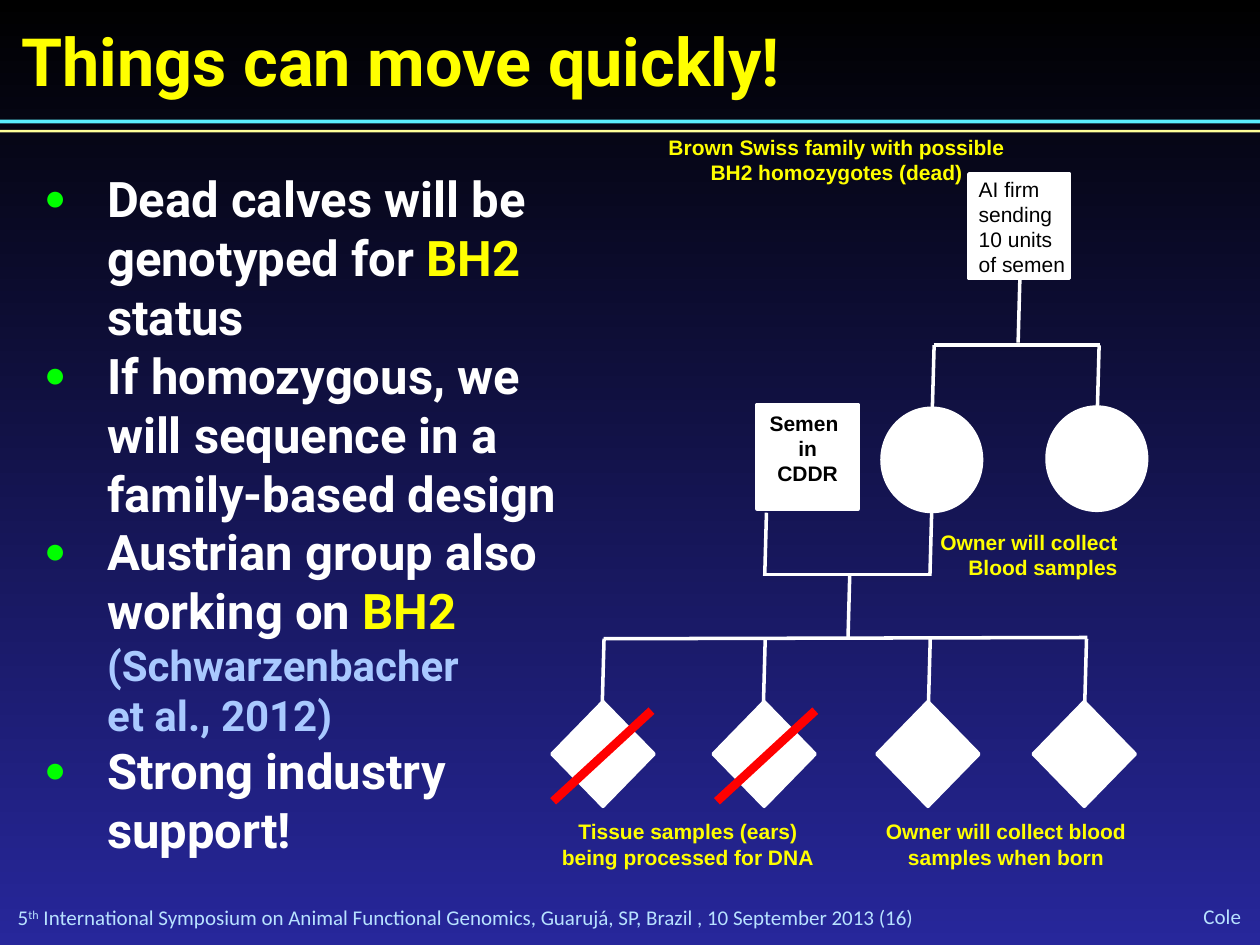
"""Build the slide on genotyping a Brown Swiss family for BH2."""
from dataclasses import dataclass

import lxml.etree
import pptx
import pptx.dml.color
import pptx.enum.shapes
import pptx.enum.text
import pptx.oxml.ns
import pptx.util

COLORS = {
    "white": "FFFFFF", "black": "000000", "yellow": "FFFF00", "red": "FF0000",
    "navy": "27279B", "green": "00FF00", "citation": "A9C9FF",
    "footer": "B8E2FF", "cyan": "5BEFFF", "cream": "FFFF99",
}
ALIGN = pptx.enum.text.PP_ALIGN
ANCHOR = pptx.enum.text.MSO_ANCHOR
SHAPE = pptx.enum.shapes.MSO_SHAPE
DROP_RISE, DROP_SLANT = 36, 1


@dataclass
class Node:
    kind: SHAPE
    left: float
    top: float
    width: float
    height: float
    color: str = "white"
    outlined: bool = True


@dataclass
class Line:
    x1: float
    y1: float
    x2: float
    y2: float
    color: str = "white"
    weight: float = 2


@dataclass
class Label:
    left: float
    top: float
    width: float
    height: float
    lines: list[str]
    align: ALIGN = ALIGN.CENTER
    color: str = "yellow"
    bold: bool = True
    font: str = "Arial"
    inset: bool = True
    wrap: bool = False


@dataclass
class Piece:
    text: str
    color: str = "white"
    size: float = 28


NODES = [
    Node(SHAPE.RECTANGLE, 553.7, 99.4, 57.6, 59.8),
    Node(SHAPE.OVAL, 504, 233.3, 56.9, 59),
    Node(SHAPE.OVAL, 598.3, 232.6, 56.9, 59),
] + [Node(SHAPE.DIAMOND, left, 401, 58.3, 59.8) for left in (315.4, 407.5, 501.1, 590.4)]

RULES = [
    Node(SHAPE.RECTANGLE, 0, 68.4, 720, 2.2, "cyan", False),
    Node(SHAPE.RECTANGLE, 0, 74.2, 720, 1.4, "cream", False),
]

DROPS = [
    (581.8, 195.8), (532.8, 233.3), (627.1, 233.3), (437, 329), (531.4, 329),
    (484.6, 364.3), (344.2, 401), (436.3, 401), (530.6, 401), (619.9, 401),
]
LINES = [Line(x, y, x + DROP_SLANT, y - DROP_RISE) for x, y in DROPS] + [
    Line(533.5, 197.3, 628.6, 197.3),
    Line(436.3, 328.3, 532.1, 328.3),
    Line(344.9, 365, 621.4, 364.3),
]
STRIKES = [Line(x, 457.9, x + 56.2, 406.1, "red", 5) for x in (316.1, 409.7)]

LABELS = [
    Label(313.2, 464.4, 159.8, 36, ["Tissue samples (ears)", "being processed for DNA"]),
    Label(498.2, 464.4, 153.4, 36, ["Owner will collect blood", "samples when born"]),
    Label(518.4, 298.8, 127.4, 36, ["Owner will collect", "Blood samples"], ALIGN.RIGHT, wrap=True),
    Label(552.2, 97.2, 65.5, 65.5, ["AI firm", "sending", "10 units", "of semen"],
          ALIGN.LEFT, "black", False),
    Label(372.2, 73.4, 211.7, 36, ["Brown Swiss family with possible BH2 homozygotes (dead)"], wrap=True),
    Label(627.8, 516.2, 81.4, 15.1, ["Cole"], ALIGN.RIGHT, "footer", False, "Calibri", False, True),
]

BULLETS = [
    [Piece("Dead calves will be\ngenotyped for "), Piece("BH2\n", "yellow"), Piece("status")],
    [Piece("If homozygous, we\nwill sequence in a\nfamily-based design")],
    [Piece("Austrian group also\nworking on "), Piece("BH2\n", "yellow"),
     Piece("(Schwarzenbacher\net al., 2012)", "citation", 24)],
    [Piece("Strong industry\nsupport!")],
]


def rgb(name: str) -> pptx.dml.color.RGBColor:
    """Look up a named colour."""
    return pptx.dml.color.RGBColor.from_string(COLORS[name])


def points(*values: float) -> list[pptx.util.Length]:
    """Turn numbers into point lengths."""
    return [pptx.util.Pt(value) for value in values]


def set_font(font, name: str, size: float, color: str, bold: bool) -> None:
    """Set the face, size, colour and weight of a font."""
    font.name, font.size, font.bold = name, pptx.util.Pt(size), bold
    font.color.rgb = rgb(color)


def place(shape, left: float, top: float, width: float, height: float) -> None:
    """Move and size a placeholder."""
    shape.left, shape.top, shape.width, shape.height = points(left, top, width, height)


def set_frame(frame, inset: bool, wrap: bool, anchor: ANCHOR = ANCHOR.TOP) -> None:
    """Set the wrapping, anchor and margins of a text frame."""
    frame.auto_size = pptx.enum.text.MSO_AUTO_SIZE.NONE
    frame.word_wrap, frame.vertical_anchor = wrap, anchor
    if not inset:
        frame.margin_left = frame.margin_right = frame.margin_top = frame.margin_bottom = 0


def draw_node(slide, node: Node):
    """Draw a filled shape."""
    shape = slide.shapes.add_shape(node.kind, *points(node.left, node.top, node.width, node.height))
    shape.shadow.inherit = False
    shape.fill.solid()
    shape.fill.fore_color.rgb = rgb(node.color)
    if node.outlined:
        shape.line.color.rgb, shape.line.width = rgb(node.color), pptx.util.Pt(2)
    else:
        shape.line.fill.background()
    return shape


def draw_line(slide, line: Line) -> None:
    """Draw a straight line."""
    connector = slide.shapes.add_connector(
        pptx.enum.shapes.MSO_CONNECTOR.STRAIGHT, *points(line.x1, line.y1, line.x2, line.y2))
    connector.line.color.rgb, connector.line.width = rgb(line.color), pptx.util.Pt(line.weight)
    lxml.etree.SubElement(connector._element.spPr, pptx.oxml.ns.qn("a:effectLst"))


def write_lines(frame, label: Label) -> None:
    """Write one paragraph for each line of a label."""
    for index, text in enumerate(label.lines):
        para = frame.add_paragraph() if index else frame.paragraphs[0]
        para.text, para.alignment = text, label.align
        set_font(para.font, label.font, 12, label.color, label.bold)


def draw_label(slide, label: Label):
    """Draw a text box."""
    box = slide.shapes.add_textbox(*points(label.left, label.top, label.width, label.height))
    set_frame(box.text_frame, label.inset, label.wrap, ANCHOR.TOP if label.inset else ANCHOR.MIDDLE)
    write_lines(box.text_frame, label)
    return box


def add_bullet(para) -> None:
    """Give a paragraph a green hanging bullet."""
    properties = para._p.get_or_add_pPr()
    properties.set("marL", str(pptx.util.Pt(36)))
    properties.set("indent", str(-pptx.util.Pt(36)))
    color = lxml.etree.SubElement(properties, pptx.oxml.ns.qn("a:buClr"))
    lxml.etree.SubElement(color, pptx.oxml.ns.qn("a:srgbClr"), val=COLORS["green"])
    lxml.etree.SubElement(properties, pptx.oxml.ns.qn("a:buSzPct"), val="75000")
    lxml.etree.SubElement(properties, pptx.oxml.ns.qn("a:buChar"), char="●")


def write_bullet(para, pieces: list[Piece]) -> None:
    """Write a bulleted paragraph of coloured pieces."""
    para.space_before = pptx.util.Pt(0)
    add_bullet(para)
    para.font.name, para.font.bold = "Roboto", True
    for piece in pieces:
        for index, text in enumerate(piece.text.split("\n")):
            if index:
                para.add_line_break()
            if text:
                span = para.add_run()
                span.text = text
                span.font.size, span.font.color.rgb = pptx.util.Pt(piece.size), rgb(piece.color)


def main() -> None:
    """Build and save the deck."""
    deck = pptx.Presentation()
    deck.slide_width, deck.slide_height = points(720, 540)
    slide = deck.slides.add_slide(deck.slide_layouts[1])
    backdrop = slide.background.fill
    backdrop.gradient()
    backdrop.gradient_angle = 270
    for stop, color in zip(backdrop.gradient_stops, ("black", "navy")):
        stop.color.rgb = rgb(color)

    title, body = slide.shapes.title, slide.placeholders[1]
    place(title, 12.2, 11.5, 648, 46.1)
    set_frame(title.text_frame, False, True)
    title.text_frame.text = "Things can move quickly!"
    heading = title.text_frame.paragraphs[0]
    heading.alignment = ALIGN.LEFT
    set_font(heading.font, "Roboto", 38, "yellow", True)

    place(body, 18, 92.9, 311.8, 404.6)
    set_frame(body.text_frame, True, False)
    for index, pieces in enumerate(BULLETS):
        para = body.text_frame.add_paragraph() if index else body.text_frame.paragraphs[0]
        write_bullet(para, pieces)

    for line in LINES:
        draw_line(slide, line)
    for node in RULES + NODES:
        draw_node(slide, node)
    semen = draw_node(slide, Node(SHAPE.RECTANGLE, 432.7, 231.1, 57.6, 59.8))
    set_frame(semen.text_frame, True, True)
    write_lines(semen.text_frame, Label(0, 0, 0, 0, ["Semen", "in CDDR"], color="black"))
    semen.text_frame.paragraphs[0].alignment = ALIGN.LEFT
    for line in STRIKES:
        draw_line(slide, line)
    for label in LABELS:
        draw_label(slide, label)

    footer = draw_label(slide, Label(10.1, 517, 634.3, 14.4, ["5"], ALIGN.LEFT, "footer", False,
                                     "Calibri", False, True))
    para = footer.text_frame.paragraphs[0]
    ordinal, venue = para.add_run(), para.add_run()
    ordinal.text = "th"
    ordinal._r.get_or_add_rPr().set("baseline", "30000")
    venue.text = (" International Symposium on Animal Functional Genomics, Guarujá, SP, Brazil ,"
                  " 10 September 2013 (16)")
    deck.save("out.pptx")


if __name__ == "__main__":
    main()
